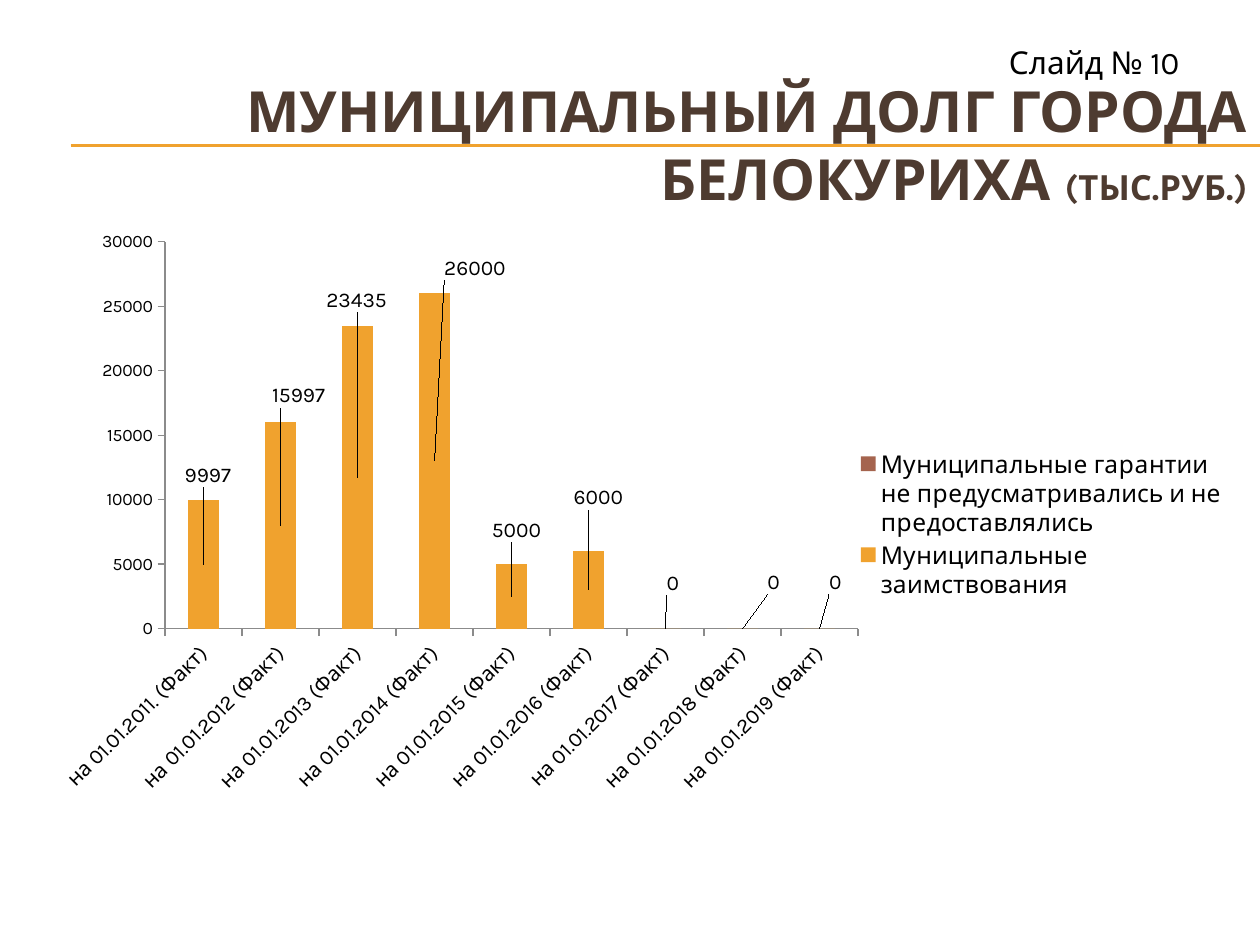
import pptx
import pptx.util
import pptx.chart.data
import pptx.dml.color
import pptx.enum.chart
import pptx.enum.shapes
import pptx.enum.text
import pptx.oxml
import pptx.oxml.ns
from pptx.util import Inches

THEME = {
    "font": "Karla",
    "title": "4E3B30", "text": "000000", "axis": "8B8B8B",
    "loans": "F0A22E", "guarantees": "A5644E",
    "title_size": 32.4, "unit_size": 19.8, "note_size": 18,
    "value_size": 10, "category_size": 12, "legend_size": 14,
}
TITLE = [("МУНИЦИПАЛЬНЫЙ ДОЛГ ГОРОДА БЕЛОКУРИХА ", "title_size"), ("(ТЫС.РУБ.)", "unit_size")]
SLIDE_NOTE = "Слайд № 10"
LOANS = "Муниципальные заимствования "
GUARANTEES = "Муниципальные гарантии не предусматривались и не предоставлялись"
DEBT = [
    ("на 01.01.2011. (Факт)", 9997, (1.65, 3.77)),
    ("на 01.01.2012 (Факт)", 15997, (2.37, 3.14)),
    ("на 01.01.2013 (Факт)", 23435, (2.83, 2.38)),
    ("на 01.01.2014 (Факт)", 26000, (3.77, 2.13)),
    ("на 01.01.2015 (Факт)", 5000, (4.1, 4.21)),
    ("на 01.01.2016 (Факт)", 6000, (4.75, 3.95)),
    ("на 01.01.2017 (Факт)", 0, (5.34, 4.63)),
    ("на 01.01.2018 (Факт)", 0, (6.14, 4.62)),
    ("на 01.01.2019 (Факт)", 0, (6.63, 4.62)),
]
AXIS_MAXIMUM = 30000
CHART_BOX = (0.33, 1.7, 9.5, 4.95)
PLOT_BOX = (1.31, 1.92, 5.5, 3.07)
LEGEND_BOX = (6.79, 3.55, 2.95, 1.25)
RULE_HEIGHTS = (1.15, 1.16)
NO_LEADER_LINES = (
    f'<c:extLst {pptx.oxml.ns.nsdecls("c")}>'
    '<c:ext uri="{CE6537A1-D6FC-4f65-9D91-7224C49458BB}" '
    'xmlns:c15="http://schemas.microsoft.com/office/drawing/2012/chart">'
    '<c15:showLeaderLines val="0"/></c:ext></c:extLst>')


def color(name):
    return pptx.dml.color.RGBColor.from_string(THEME[name])


def style_font(font, size, tone="text", bold=False):
    font.name = THEME["font"]
    font.size = pptx.util.Pt(THEME[size])
    font.color.rgb = color(tone)
    font.bold = bold


def layout_xml(values, inner=False):
    target = '<c:layoutTarget val="inner"/>' if inner else ""
    modes = "".join(f'<c:{axis}Mode val="edge"/>' for axis in "xy") if len(values) == 4 else ""
    sizes = "".join(f'<c:{key} val="{value:.4f}"/>' for key, value in zip("xywh", values))
    return pptx.oxml.parse_xml(
        f'<c:layout {pptx.oxml.ns.nsdecls("c")}><c:manualLayout>'
        f"{target}{modes}{sizes}</c:manualLayout></c:layout>")


def chart_fractions(box):
    left, top, width, height = CHART_BOX
    return ((box[0] - left) / width, (box[1] - top) / height, box[2] / width, box[3] / height)


def replace_layout(element, layout, previous):
    for old in element.findall(pptx.oxml.ns.qn("c:layout")):
        element.remove(old)
    anchor = element.find(pptx.oxml.ns.qn(previous)) if previous else None
    if anchor is None:
        element.insert(0, layout)
    else:
        anchor.addnext(layout)


def add_rules(slide):
    for height in RULE_HEIGHTS:
        rule = slide.shapes.add_connector(
            pptx.enum.shapes.MSO_CONNECTOR.STRAIGHT,
            Inches(0.56), Inches(height), Inches(10), Inches(height))
        rule.line.color.rgb = color("loans")
        rule.line.width = pptx.util.Pt(0.75)
        rule._element.spPr.append(
            pptx.oxml.parse_xml(f'<a:effectLst {pptx.oxml.ns.nsdecls("a")}/>'))


def add_title(slide):
    title = slide.shapes.title
    title.left, title.top, title.width, title.height = map(Inches, (0.5, 0.68, 9.5, 0.92))
    frame = title.text_frame
    frame.auto_size = pptx.enum.text.MSO_AUTO_SIZE.NONE
    frame.word_wrap = True
    frame.vertical_anchor = pptx.enum.text.MSO_ANCHOR.MIDDLE
    paragraph = frame.paragraphs[0]
    paragraph.alignment = pptx.enum.text.PP_ALIGN.RIGHT
    for text, size in TITLE:
        run = paragraph.add_run()
        run.text = text
        style_font(run.font, size, "title", True)


def add_slide_note(slide):
    box = slide.shapes.add_textbox(*map(Inches, (7.91, 0.29, 1.7, 0.4)))
    box.text_frame.word_wrap = False
    box.text_frame.auto_size = pptx.enum.text.MSO_AUTO_SIZE.SHAPE_TO_FIT_TEXT
    run = box.text_frame.paragraphs[0].add_run()
    run.text = SLIDE_NOTE
    style_font(run.font, "note_size")


def hide_leader_lines(labels):
    for old in labels._element.findall(pptx.oxml.ns.qn("c:showLeaderLines")):
        labels._element.remove(old)
    labels._element.append(pptx.oxml.parse_xml(NO_LEADER_LINES))


def place_value_labels(series):
    labels = series.data_labels
    labels.show_value = True
    style_font(labels.font, "category_size")
    left, top, width, height = PLOT_BOX
    step = width / len(DEBT)
    for index, (_, value, (x, y)) in enumerate(DEBT):
        label = series.points[index].data_label
        style_font(label.font, "category_size")
        label.position = pptx.enum.chart.XL_LABEL_POSITION.CENTER
        bar_x = left + step * (index + 0.5)
        bar_y = top + height * (1 - value / AXIS_MAXIMUM / 2)
        offset = ((x - bar_x) / CHART_BOX[2], (y - bar_y) / CHART_BOX[3])
        element = labels._element.findall(pptx.oxml.ns.qn("c:dLbl"))[index]
        replace_layout(element, layout_xml(offset), "c:idx")
    hide_leader_lines(labels)


def add_debt_chart(slide):
    data = pptx.chart.data.CategoryChartData()
    data.categories = [category for category, _, _ in DEBT]
    data.add_series(LOANS, [value for _, value, _ in DEBT])
    data.add_series(GUARANTEES, [0] + [None] * (len(DEBT) - 1))
    chart = slide.shapes.add_chart(
        pptx.enum.chart.XL_CHART_TYPE.COLUMN_STACKED, *map(Inches, CHART_BOX), data).chart
    chart.has_title = False
    style_font(chart.font, "value_size")
    plot = chart.plots[0]
    plot.gap_width, plot.overlap, plot.vary_by_categories = 150, 100, False
    for series, tone in zip(plot.series, ("loans", "guarantees")):
        series.format.fill.solid()
        series.format.fill.fore_color.rgb = color(tone)
    place_value_labels(plot.series[0])

    for axis, size in ((chart.category_axis, "category_size"), (chart.value_axis, "value_size")):
        axis.has_major_gridlines = False
        axis.major_tick_mark = pptx.enum.chart.XL_TICK_MARK.OUTSIDE
        axis.format.line.color.rgb = color("axis")
        style_font(axis.tick_labels.font, size)
    chart.value_axis.minimum_scale = 0
    chart.value_axis.maximum_scale = AXIS_MAXIMUM
    chart.value_axis.major_unit = 5000
    category_text = chart.category_axis._element.find(pptx.oxml.ns.qn("c:txPr"))
    category_text.find(pptx.oxml.ns.qn("a:bodyPr")).set("rot", "-2700000")

    chart.has_legend = True
    chart.legend.position = pptx.enum.chart.XL_LEGEND_POSITION.RIGHT
    chart.legend.include_in_layout = False
    style_font(chart.legend.font, "legend_size")
    replace_layout(chart.legend._element, layout_xml(chart_fractions(LEGEND_BOX)), "c:legendPos")
    plot_area = chart._chartSpace.chart.plotArea
    replace_layout(plot_area, layout_xml(chart_fractions(PLOT_BOX), inner=True), None)


def main():
    presentation = pptx.Presentation()
    presentation.slide_width, presentation.slide_height = Inches(10), Inches(7.5)
    slide = presentation.slides.add_slide(presentation.slide_layouts[5])
    add_rules(slide)
    add_title(slide)
    add_slide_note(slide)
    add_debt_chart(slide)
    presentation.save("out.pptx")


if __name__ == "__main__":
    main()
